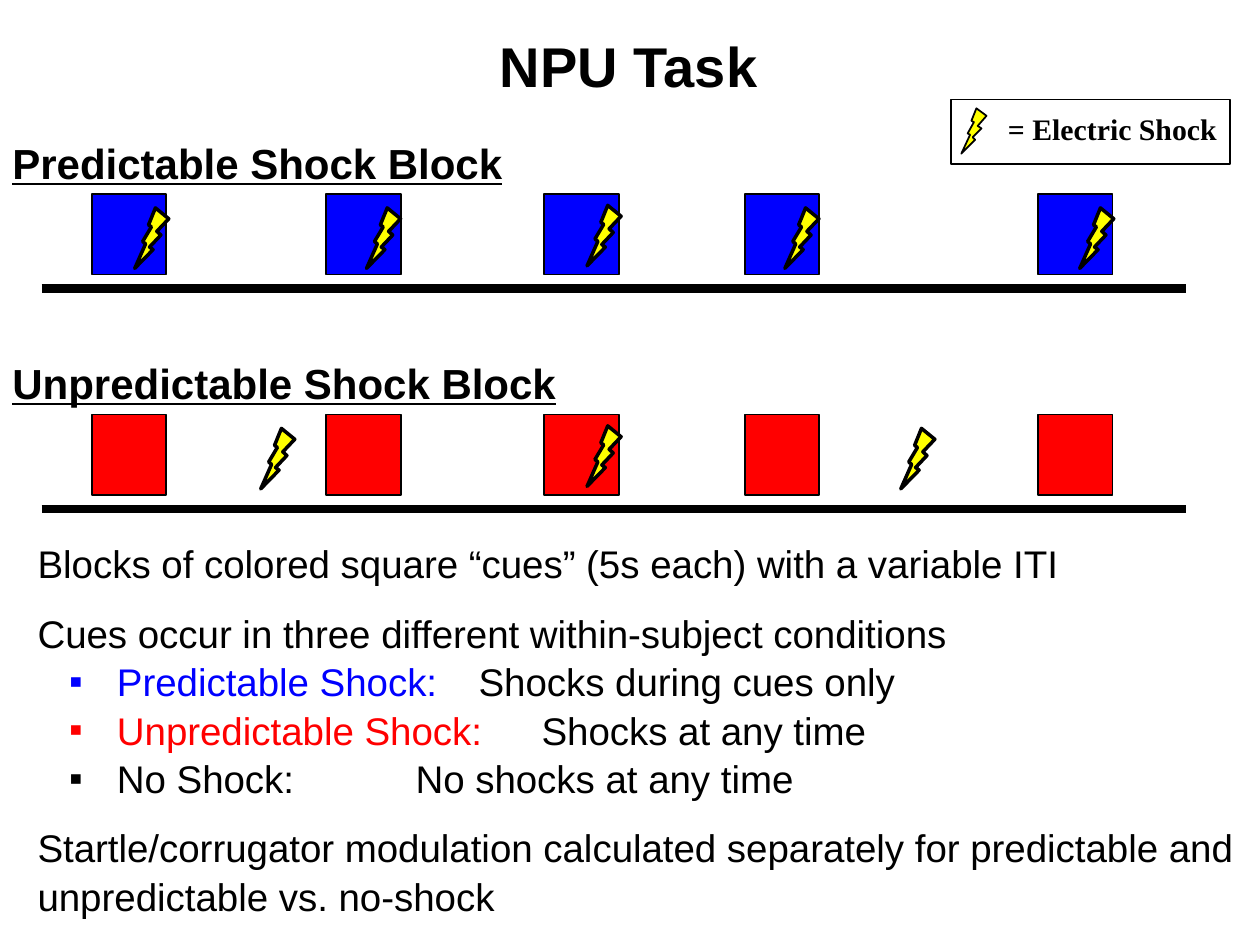
from pptx import Presentation
from pptx.dml.color import RGBColor
from pptx.enum.shapes import MSO_CONNECTOR, MSO_SHAPE
from pptx.enum.text import MSO_AUTO_SIZE
from pptx.oxml.ns import qn
from pptx.util import Inches, Pt
from lxml.etree import SubElement

BLACK = RGBColor(0, 0, 0)
BLUE = RGBColor(0, 0, 255)
RED = RGBColor(255, 0, 0)
YELLOW = RGBColor(255, 255, 0)

prs = Presentation()
prs.slide_width, prs.slide_height = Inches(10), Inches(7.5)
COL = prs.slide_width / 100   # grid of 100 columns by 75 rows
ROW = prs.slide_height / 75
s = prs.slides.add_slide(prs.slide_layouts[6])


def add_box(kind, x, y, w, h, fill, width):
    """Add a black-outlined preset shape, placed in columns and rows."""
    sp = s.shapes.add_shape(kind, int(x * COL), int(y * ROW), int(w * COL), int(h * ROW))
    sp.shadow.inherit = False
    if fill is None:
        sp.fill.background()
    else:
        sp.fill.solid()
        sp.fill.fore_color.rgb = fill
    sp.line.color.rgb = BLACK
    sp.line.width = Pt(width)
    return sp


def add_label(text, x, y, w, h, size, font="Arial", underline=None, inset=True):
    """Add one line of bold text, placed in columns and rows."""
    tb = s.shapes.add_textbox(int(x * COL), int(y * ROW), int(w * COL), int(h * ROW))
    tf = tb.text_frame
    tf.word_wrap = False
    tf.auto_size = MSO_AUTO_SIZE.SHAPE_TO_FIT_TEXT
    if not inset:
        tf.margin_left = tf.margin_right = tf.margin_top = tf.margin_bottom = 0
    tf.text = text
    f = tf.paragraphs[0].runs[0].font
    f.name, f.size, f.bold, f.underline = font, Pt(size), True, underline
    f.color.rgb = BLACK


# Title and legend
add_label("NPU Task", 38.7, 2, 22.6, 6.4, 32)
add_box(MSO_SHAPE.RECTANGLE, 75.5, 7.9, 22.1, 5.1, None, 1)
bolt_points = [(77.5, 8.6), (78.3, 9.2), (77.6, 10), (77.9, 10.2), (77.2, 10.9), (77.4, 11.1),
               (76.3, 12.2), (77, 10.7), (76.8, 10.6), (77.3, 9.7), (77.1, 9.6)]
outline = [(int(x * COL), int(y * ROW)) for x, y in bolt_points]
fb = s.shapes.build_freeform(*outline[0])
fb.add_line_segments(outline[1:], close=True)
bolt = fb.convert_to_shape()
bolt.shadow.inherit = False
bolt.fill.solid()
bolt.fill.fore_color.rgb = YELLOW
bolt.line.color.rgb = BLACK
bolt.line.width = Pt(1)
add_label("= Electric Shock", 80, 8.8, 16.7, 2.9, 17, "Times New Roman", inset=False)

# Shock blocks: heading, its width, top row of the cues, colour, bolts (column, drop below cue top)
CUES = [7.3, 25.9, 43.2, 59.1, 82.4]
blocks = [
    ("Predictable Shock Block", 41.3, 15.4, BLUE,
     [(10.7, 1.1), (29.1, 1.1), (46.6, 0.9), (62.3, 1.1), (85.7, 1.1)]),
    ("Unpredictable Shock Block", 45.6, 32.9, RED, [(20.7, 1.1), (46.6, 0.9), (71.5, 1.1)]),
]
for heading, width, top, color, bolts in blocks:
    add_label(heading, 0, top - 5, width, 5, 24, underline=True)
    for x in CUES:
        add_box(MSO_SHAPE.RECTANGLE, x, top, 5.9, 6.4, color, 1)
    for x, drop in bolts:
        sp = add_box(MSO_SHAPE.LIGHTNING_BOLT, x, top + drop, 2.7, 4.8, YELLOW, 2)
        sp._element.spPr.find(qn("a:xfrm")).set("flipH", "1")
    y = int((top + 7.5) * ROW)
    axis = s.shapes.add_connector(MSO_CONNECTOR.STRAIGHT, int(3.3 * COL), y, int(94.1 * COL), y)
    axis.line.color.rgb = BLACK
    axis.line.width = Pt(5)
    SubElement(axis._element.spPr, qn("a:effectLst"))

# Description: runs, bulleted, space before in points
lines = [
    ([("Blocks of colored square “cues” (5s each) with a variable ITI", BLACK)], False, 0),
    ([("Cues occur in three different within-subject conditions", BLACK)], False, 12),
    ([("Predictable Shock: \t", BLUE), ("Shocks during cues only", BLACK)], True, 0),
    ([("Unpredictable Shock:\t", RED), ("Shocks at any time", BLACK)], True, 0),
    ([("No Shock:\t\tNo shocks at any time", BLACK)], True, 0),
    ([("Startle/corrugator modulation calculated separately for predictable and "
       "unpredictable vs. no-shock", BLACK)], False, 12),
]
tb = s.shapes.add_textbox(int(2 * COL), int(42.2 * ROW), int(97.6 * COL), int(30.3 * ROW))
tf = tb.text_frame
tf.word_wrap = True
tf.auto_size = MSO_AUTO_SIZE.SHAPE_TO_FIT_TEXT
for i, (runs, bulleted, before) in enumerate(lines):
    p = tf.paragraphs[0] if i == 0 else tf.add_paragraph()
    p.line_spacing = 1.05
    p.space_before = Pt(before)
    if bulleted:
        p.level = 1
        pPr = p._p.get_or_add_pPr()
        pPr.set("marL", str(Inches(0.63)))
        pPr.set("indent", str(Inches(-0.38)))
        SubElement(pPr, qn("a:buFont"), typeface="Arial")
        SubElement(pPr, qn("a:buChar"), char="▪")
    for text, color in runs:
        r = p.add_run()
        r.text = text
        r.font.name, r.font.size = "Arial", Pt(22)
        r.font.color.rgb = color

prs.save("out.pptx")
